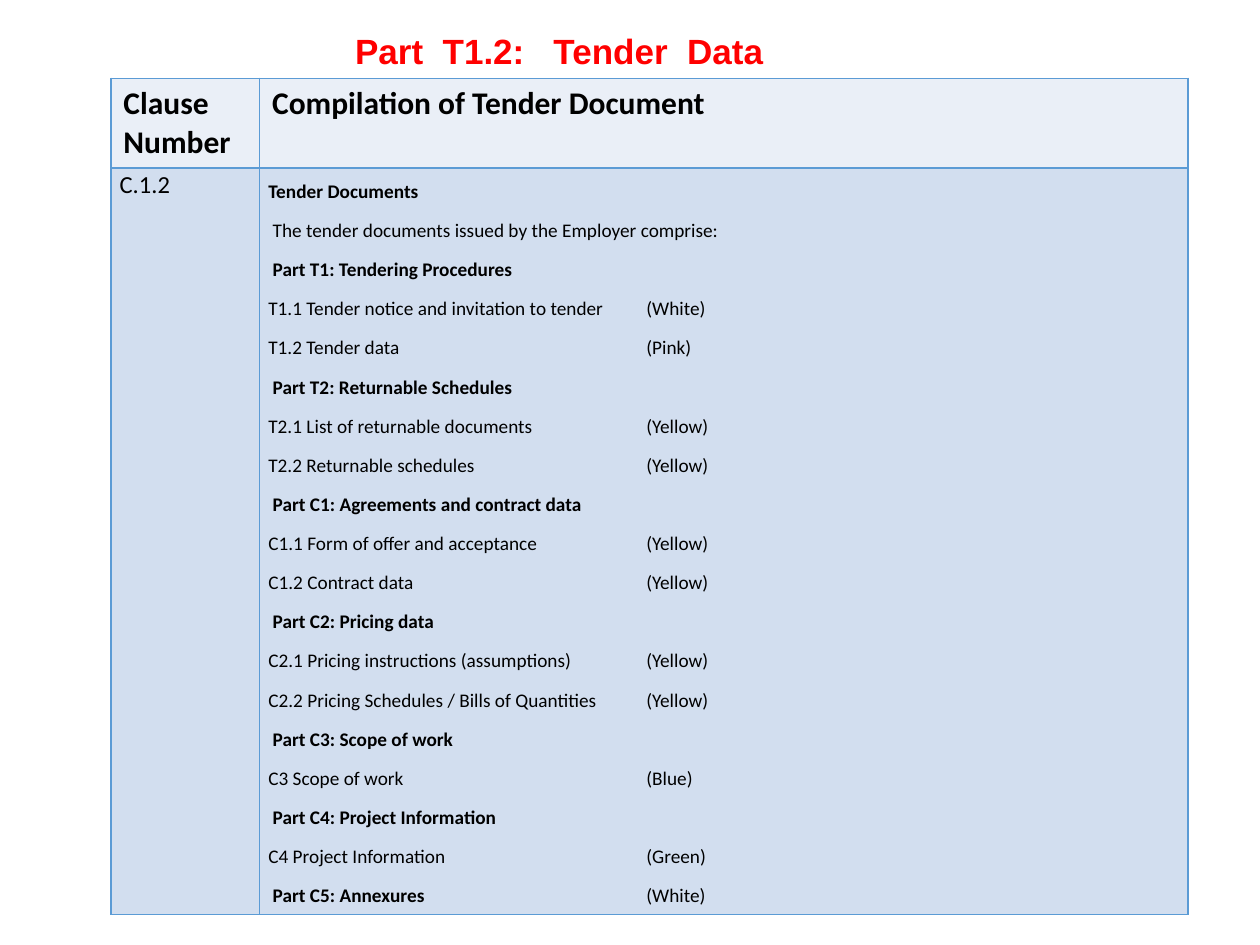
from dataclasses import dataclass

from lxml import etree
from pptx import Presentation
from pptx.dml.color import RGBColor
from pptx.enum.text import MSO_ANCHOR, MSO_AUTO_SIZE, PP_ALIGN
from pptx.oxml.ns import qn
from pptx.util import Inches, Pt

CENTER, LEFT = PP_ALIGN.CENTER, PP_ALIGN.LEFT
TOP = MSO_ANCHOR.TOP
NO_AUTO_SIZE = MSO_AUTO_SIZE.NONE

RED = RGBColor(0xFF, 0x00, 0x00)
BLACK = RGBColor(0x00, 0x00, 0x00)
BORDER = RGBColor(0x5B, 0x9B, 0xD5)
HEADER_FILL = RGBColor(0xEA, 0xEF, 0xF7)
BODY_FILL = RGBColor(0xD2, 0xDE, 0xEF)

SLIDE_WIDTH, SLIDE_HEIGHT = Inches(10), Inches(7.5)
COLUMN_SHARES = (0.118, 0.737)
ROW_SHARES = (0.0935, 0.79)
TABLE_LEFT, TABLE_TOP = 0.088, 0.083
COLOUR_TAB = Inches(3)
BODY_INSET = Inches(0.07)


@dataclass(frozen=True)
class Item:
    name: str
    colour: str


@dataclass(frozen=True)
class Part:
    heading: str
    items: tuple[Item, ...] = ()
    colour: str = ""


PARTS = (
    Part("Part T1: Tendering Procedures", (
        Item("T1.1 Tender notice and invitation to tender", "White"),
        Item("T1.2 Tender data", "Pink"))),
    Part("Part T2: Returnable Schedules", (
        Item("T2.1 List of returnable documents", "Yellow"),
        Item("T2.2 Returnable schedules", "Yellow"))),
    Part("Part C1: Agreements and contract data", (
        Item("C1.1 Form of offer and acceptance", "Yellow"),
        Item("C1.2 Contract data", "Yellow"))),
    Part("Part C2: Pricing data", (
        Item("C2.1 Pricing instructions (assumptions)", "Yellow"),
        Item("C2.2 Pricing Schedules / Bills of Quantities", "Yellow"))),
    Part("Part C3: Scope of work", (Item("C3 Scope of work", "Blue"),)),
    Part("Part C4: Project Information", (Item("C4 Project Information", "Green"),)),
    Part("Part C5: Annexures", colour="White"),
)


def across(share: float) -> int:
    return round(SLIDE_WIDTH * share)


def down(share: float) -> int:
    return round(SLIDE_HEIGHT * share)


def add_run(paragraph, text: str, *, size: float, bold: bool = False,
            font: str = "Calibri", colour: RGBColor = BLACK) -> None:
    run = paragraph.add_run()
    run.text = text
    run.font.name = font
    run.font.size = Pt(size)
    run.font.bold = bold
    run.font.color.rgb = colour


def next_paragraph(frame, *, spacing: float = 1, after: float = 0, tab: int = 0):
    first = frame.paragraphs[0]
    paragraph = frame.add_paragraph() if first.runs else first
    paragraph.alignment = LEFT
    paragraph.line_spacing = spacing
    paragraph.space_after = Pt(after)
    if tab:
        tabs = etree.SubElement(paragraph._p.get_or_add_pPr(), qn("a:tabLst"))
        etree.SubElement(tabs, qn("a:tab"), pos=str(tab), algn="l")
    return paragraph


def add_line(frame, text: str, *, bold: bool = False, colour: str = "") -> None:
    paragraph = next_paragraph(frame, spacing=1.5, after=2,
                               tab=COLOUR_TAB if colour else 0)
    add_run(paragraph, text, size=11, bold=bold)
    if colour:
        add_run(paragraph, f"\t({colour})", size=11)


def format_cell(cell, fill: RGBColor) -> None:
    cell.fill.solid()
    cell.fill.fore_color.rgb = fill
    cell.vertical_anchor = TOP
    properties = cell._tc.get_or_add_tcPr()
    for index, side in enumerate(("lnL", "lnR", "lnT", "lnB")):
        line = etree.Element(qn(f"a:{side}"), w=str(Pt(1)))
        solid = etree.SubElement(line, qn("a:solidFill"))
        etree.SubElement(solid, qn("a:srgbClr"), val=str(BORDER))
        properties.insert(index, line)


def add_title(slide) -> None:
    title = slide.shapes.title
    title.left, title.top = across(0.271), down(0.025)
    title.width, title.height = across(0.346), down(0.059)
    frame = title.text_frame
    frame.word_wrap = False
    frame.auto_size = NO_AUTO_SIZE
    frame.vertical_anchor = TOP
    paragraph = next_paragraph(frame)
    paragraph.alignment = CENTER
    add_run(paragraph, "Part  T1.2:   Tender  Data", size=20, bold=True,
            font="Arial", colour=RED)


def add_tender_table(slide) -> None:
    table = slide.shapes.add_table(
        len(ROW_SHARES), len(COLUMN_SHARES), across(TABLE_LEFT), down(TABLE_TOP),
        across(sum(COLUMN_SHARES)), down(sum(ROW_SHARES))).table
    for column, share in zip(table.columns, COLUMN_SHARES):
        column.width = across(share)
    for row, share, fill in zip(table.rows, ROW_SHARES, (HEADER_FILL, BODY_FILL)):
        row.height = down(share)
        for cell in row.cells:
            format_cell(cell, fill)

    headers = (("Clause", "Number"), ("Compilation of Tender Document",))
    for cell, lines in zip(table.rows[0].cells, headers):
        for text in lines:
            add_run(next_paragraph(cell.text_frame), text, size=18, bold=True)

    for cell in table.rows[1].cells:
        cell.margin_left = cell.margin_right = BODY_INSET
        cell.margin_top = cell.margin_bottom = 0
    clause, documents = (cell.text_frame for cell in table.rows[1].cells)
    add_run(next_paragraph(clause, spacing=1.07, after=8), "C.1.2", size=14)

    add_line(documents, "Tender Documents", bold=True)
    add_line(documents, " The tender documents issued by the Employer comprise:")
    for part in PARTS:
        add_line(documents, f" {part.heading}", bold=True, colour=part.colour)
        for item in part.items:
            add_line(documents, item.name, colour=item.colour)


def main() -> None:
    presentation = Presentation()
    presentation.slide_width, presentation.slide_height = SLIDE_WIDTH, SLIDE_HEIGHT
    slide = presentation.slides.add_slide(presentation.slide_layouts.get_by_name("Title Only"))
    add_title(slide)
    add_tender_table(slide)
    presentation.save("out.pptx")


if __name__ == "__main__":
    main()
